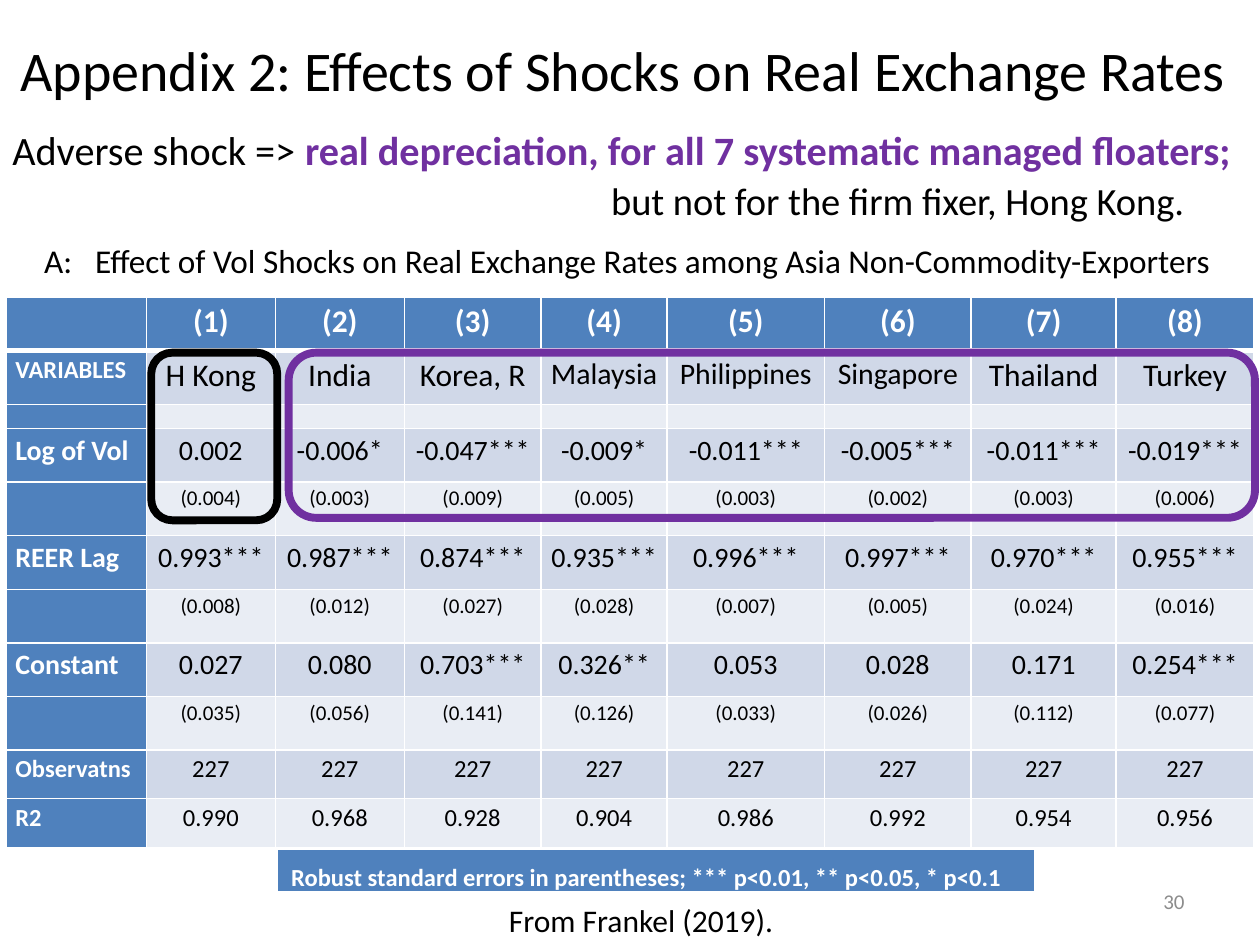
from lxml.etree import SubElement
from pptx import Presentation
from pptx.dml.color import RGBColor
from pptx.enum.shapes import MSO_SHAPE
from pptx.enum.text import MSO_ANCHOR, PP_ALIGN
from pptx.oxml.ns import qn
from pptx.util import Cm, Pt

BLACK, WHITE, PURPLE, GREY = "000000", "FFFFFF", "7030A0", "8C8C8C"
BLUE, BAND_DARK, BAND_LIGHT = "4F81BD", "D0D8E8", "E9EDF4"


def rgb(color):
    return RGBColor.from_string(color)


def write(paragraph, text, size=18, color=BLACK, bold=False, font="Calibri"):
    run = paragraph.add_run()
    run.text = text
    run.font.name = font
    run.font.size = Pt(size)
    run.font.bold = bold
    run.font.color.rgb = rgb(color)


class SlideBuilder:
    cell_inset = 0.18
    line_spacing = 1.15
    outline_width = 4.5
    empty_cell_size = 10

    def __init__(self, slide):
        self.slide = slide

    def text(self, place, runs, align=PP_ALIGN.LEFT, anchor=MSO_ANCHOR.TOP,
             wrap=True, hanging=0):
        frame = self.slide.shapes.add_textbox(*map(Cm, place)).text_frame
        frame.word_wrap = wrap
        frame.vertical_anchor = anchor
        paragraph = frame.paragraphs[0]
        paragraph.alignment = align
        if hanging:
            properties = paragraph._p.get_or_add_pPr()
            properties.set("marL", str(Cm(hanging)))
            properties.set("indent", str(-Cm(hanging)))
        for content, style in runs:
            write(paragraph, content, **style)

    def outline(self, place, color):
        frame = self.slide.shapes.add_shape(
            MSO_SHAPE.ROUNDED_RECTANGLE, *map(Cm, place))
        frame.shadow.inherit = False
        frame.fill.background()
        frame.line.color.rgb = rgb(color)
        frame.line.width = Pt(self.outline_width)

    def table(self, left, top, widths, heights):
        grid = self.slide.shapes.add_table(
            len(heights), len(widths), Cm(left), Cm(top),
            Cm(sum(widths)), Cm(sum(heights))).table
        grid.horz_banding = False
        for column, width in zip(grid.columns, widths):
            column.width = Cm(width)
        for row, height in zip(grid.rows, heights):
            row.height = Cm(height)
        return grid

    def cell(self, cell, text, fill, align=PP_ALIGN.LEFT, bottom=1,
             top_inset=0, **style):
        cell.margin_left = cell.margin_right = Cm(self.cell_inset)
        cell.margin_top, cell.margin_bottom = Cm(top_inset), 0
        properties = cell._tc.get_or_add_tcPr()
        for side, width in (("L", 1), ("R", 1), ("T", 1), ("B", bottom)):
            border = SubElement(properties, qn(f"a:ln{side}"), w=str(Pt(width)))
            paint = SubElement(border, qn("a:solidFill"))
            SubElement(paint, qn("a:srgbClr"), val=WHITE)
        cell.fill.solid()
        cell.fill.fore_color.rgb = rgb(fill)
        paragraph = cell.text_frame.paragraphs[0]
        paragraph.alignment = align
        paragraph.line_spacing = self.line_spacing
        if text:
            write(paragraph, text, **style)
        else:
            SubElement(paragraph._p, qn("a:endParaRPr"),
                       sz=str(self.empty_cell_size * 100))


COLUMN_WIDTHS = [2.82, 2.6, 2.6, 2.76, 2.54, 3.17, 2.96, 2.92, 2.78]
ROW_HEIGHTS = [1.08] * 2 + [0.49] + [1.08] * 6 + [0.98] * 2
LONG_NAMES = {"Malaysia", "Philippines", "Singapore"}

REGRESSION = [
    ("", 18, 18, [f"({number})" for number in range(1, 9)]),
    ("VARIABLES", 14, 18, ["H Kong", "India", "Korea, R", "Malaysia",
                           "Philippines", "Singapore", "Thailand", "Turkey"]),
    ("", 12, 12, [""] * 8),
    ("Log of Vol", 16, 16, ["0.002", "-0.006*", "-0.047***", "-0.009*",
                            "-0.011***", "-0.005***", "-0.011***", "-0.019***"]),
    ("", 12, 12, ["(0.004)", "(0.003)", "(0.009)", "(0.005)",
                  "(0.003)", "(0.002)", "(0.003)", "(0.006)"]),
    ("REER Lag", 16, 16, ["0.993***", "0.987***", "0.874***", "0.935***",
                          "0.996***", "0.997***", "0.970***", "0.955***"]),
    ("", 12, 12, ["(0.008)", "(0.012)", "(0.027)", "(0.028)",
                  "(0.007)", "(0.005)", "(0.024)", "(0.016)"]),
    ("Constant", 16, 16, ["0.027", "0.080", "0.703***", "0.326**",
                          "0.053", "0.028", "0.171", "0.254***"]),
    ("", 12, 12, ["(0.035)", "(0.056)", "(0.141)", "(0.126)",
                  "(0.033)", "(0.026)", "(0.112)", "(0.077)"]),
    ("Observatns", 14, 14, ["227"] * 8),
    ("R2", 14, 14, ["0.990", "0.968", "0.928", "0.904",
                    "0.986", "0.992", "0.954", "0.956"]),
]


def add_regression(builder):
    grid = builder.table(0.13, 5.99, COLUMN_WIDTHS, ROW_HEIGHTS)
    for row, (label, label_size, value_size, values) in enumerate(REGRESSION):
        header = row == 0
        bottom = 3 if header else 1
        band = BLUE if header else BAND_DARK if row % 2 else BAND_LIGHT
        builder.cell(grid.cell(row, 0), label, BLUE, bottom=bottom,
                     size=label_size, color=WHITE, bold=True)
        for column, value in enumerate(values, 1):
            builder.cell(grid.cell(row, column), value, band,
                         align=PP_ALIGN.CENTER, bottom=bottom,
                         size=17 if value in LONG_NAMES else value_size,
                         color=WHITE if header else BLACK, bold=header)


def main():
    deck = Presentation()
    deck.slide_width, deck.slide_height = Cm(25.4), Cm(19.05)
    builder = SlideBuilder(deck.slides.add_slide(deck.slide_layouts[6]))

    builder.text((0.05, -0.2, 25.04, 3.18),
                 [("Appendix 2: Effects of Shocks on Real Exchange Rates", {"size": 32})],
                 align=PP_ALIGN.CENTER, anchor=MSO_ANCHOR.MIDDLE)
    add_regression(builder)
    significance = builder.table(5.59, 17.12, [15.27], [0.84])
    builder.cell(significance.cell(0, 0),
                 "Robust standard errors in parentheses; *** p<0.01, ** p<0.05, * p<0.1",
                 BLUE, bottom=3, top_inset=0.2, size=14, color=WHITE, bold=True)
    significance.cell(0, 0).margin_left = Cm(0.28)

    builder.text((0.64, 4.72, 24.43, 1.07),
                 [("A:\tEffect of Vol Shocks on Real Exchange Rates among "
                   "Asia Non-Commodity-Exporters", {"size": 19})], hanging=1.03)
    builder.text((0, 2.41, 25.35, 1.24),
                 [("Adverse shock => ", {"size": 23}),
                  ("real depreciation, for all 7 systematic managed floaters;",
                   {"size": 23, "color": PURPLE, "bold": True})], wrap=False)
    builder.text((12.07, 3.45, 12.22, 1.19),
                 [("but not for the firm fixer, Hong Kong.", {"size": 22})], wrap=False)
    builder.outline((5.82, 7.11, 19.48, 3.33), PURPLE)
    builder.outline((3.05, 7.11, 2.54, 3.38), BLACK)
    builder.text((18.21, 17.65, 5.92, 1.02), [("30", {"size": 12, "color": GREY})],
                 align=PP_ALIGN.RIGHT, anchor=MSO_ANCHOR.MIDDLE)
    builder.text((10.01, 18.03, 6.07, 1.02), [("From Frankel (2019).", {})])

    deck.save("out.pptx")


if __name__ == "__main__":
    main()
